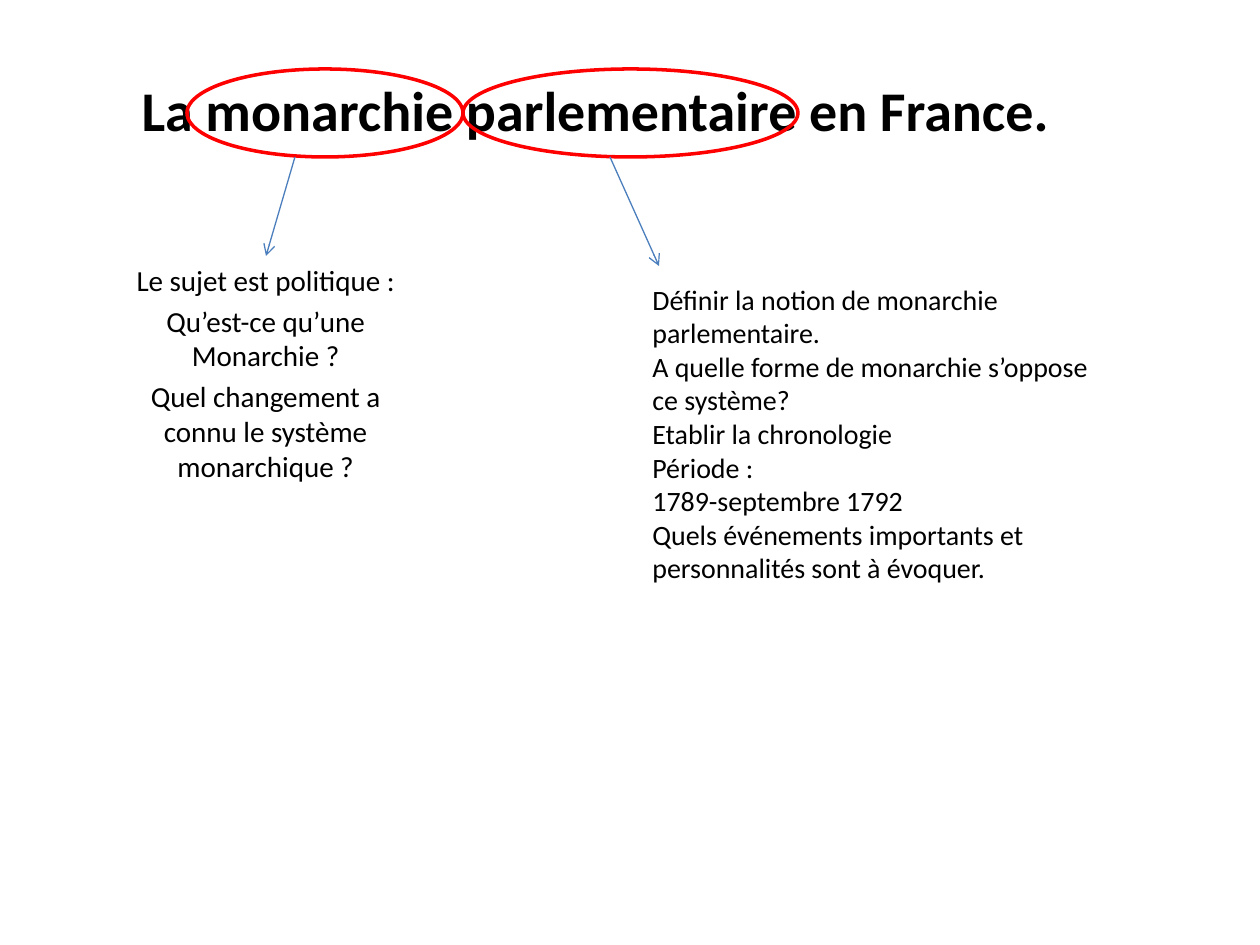
from lxml.etree import SubElement
from pptx import Presentation
from pptx.dml.color import RGBColor
from pptx.enum.shapes import MSO_CONNECTOR, MSO_SHAPE
from pptx.enum.text import MSO_ANCHOR, MSO_AUTO_SIZE, PP_ALIGN
from pptx.oxml.ns import qn
from pptx.util import Emu, Inches, Pt

PIXEL = 914400 / 126
BLACK = RGBColor(0, 0, 0)
RED = RGBColor(255, 0, 0)
BLUE = RGBColor(0x4B, 0x7E, 0xBC)


class SlideBuilder:
    """Hold the style and the current slide, and add each kind of element."""

    font_name = "Calibri"

    def __init__(self, slide):
        self.slide = slide

    def scale(self, *lengths):
        return [Emu(round(length * PIXEL)) for length in lengths]

    def fill_text(self, shape, box, paragraphs, size, bold=False,
                  alignment=PP_ALIGN.LEFT, space_before=0):
        shape.left, shape.top, shape.width, shape.height = self.scale(*box)
        frame = shape.text_frame
        frame.word_wrap = True
        frame.auto_size = MSO_AUTO_SIZE.NONE
        frame.vertical_anchor = MSO_ANCHOR.TOP
        for index, text in enumerate(paragraphs):
            paragraph = frame.add_paragraph() if index else frame.paragraphs[0]
            paragraph.alignment = alignment
            paragraph.space_before = Pt(space_before)
            run = paragraph.add_run()
            run.text = text
            run.font.name = self.font_name
            run.font.size = Pt(size)
            run.font.bold = bold
            run.font.color.rgb = BLACK

    def title(self, box, text):
        self.fill_text(self.slide.shapes.title, box, [text], 32, bold=True)

    def subtitle(self, box, paragraphs):
        self.fill_text(self.slide.placeholders[1], box, paragraphs, 16.6,
                       alignment=PP_ALIGN.CENTER, space_before=3.3)

    def text_box(self, box, paragraphs):
        shape = self.slide.shapes.add_textbox(*self.scale(*box))
        self.fill_text(shape, box, paragraphs, 16)

    def ellipse(self, box):
        shape = self.slide.shapes.add_shape(MSO_SHAPE.OVAL, *self.scale(*box))
        shape.shadow.inherit = False
        shape.fill.background()
        shape.line.color.rgb = RED
        shape.line.width = Pt(2)

    def arrow(self, start, end):
        connector = self.slide.shapes.add_connector(
            MSO_CONNECTOR.STRAIGHT, *self.scale(*start, *end))
        connector.line.color.rgb = BLUE
        connector.line.width = Pt(0.75)
        properties = connector.element.spPr
        SubElement(properties.find(qn("a:ln")), qn("a:tailEnd"), type="arrow")
        SubElement(properties, qn("a:effectLst"))


def main():
    presentation = Presentation()
    presentation.slide_width = Inches(10)
    presentation.slide_height = Inches(7.5)
    slide = presentation.slides.add_slide(presentation.slide_layouts[0])
    builder = SlideBuilder(slide)

    builder.subtitle((118, 256, 295, 265), [
        "Le sujet est politique :",
        "Qu’est-ce qu’une Monarchie ?",
        "Quel changement a connu le système monarchique ?",
    ])
    builder.title((129, 69, 1033, 81), "La monarchie parlementaire en France.")
    builder.ellipse((187, 69, 276, 88))
    builder.ellipse((463, 69, 335, 88))
    builder.arrow((295, 157), (266, 256))
    builder.arrow((610, 157), (659, 266))
    builder.text_box((640, 276, 473, 318), [
        "Définir la notion de monarchie parlementaire.",
        "A quelle forme de monarchie s’oppose ce système?",
        "Etablir la chronologie",
        "Période :",
        "1789-septembre 1792",
        "Quels événements importants et personnalités sont à évoquer.",
    ])
    presentation.save("out.pptx")


if __name__ == "__main__":
    main()
